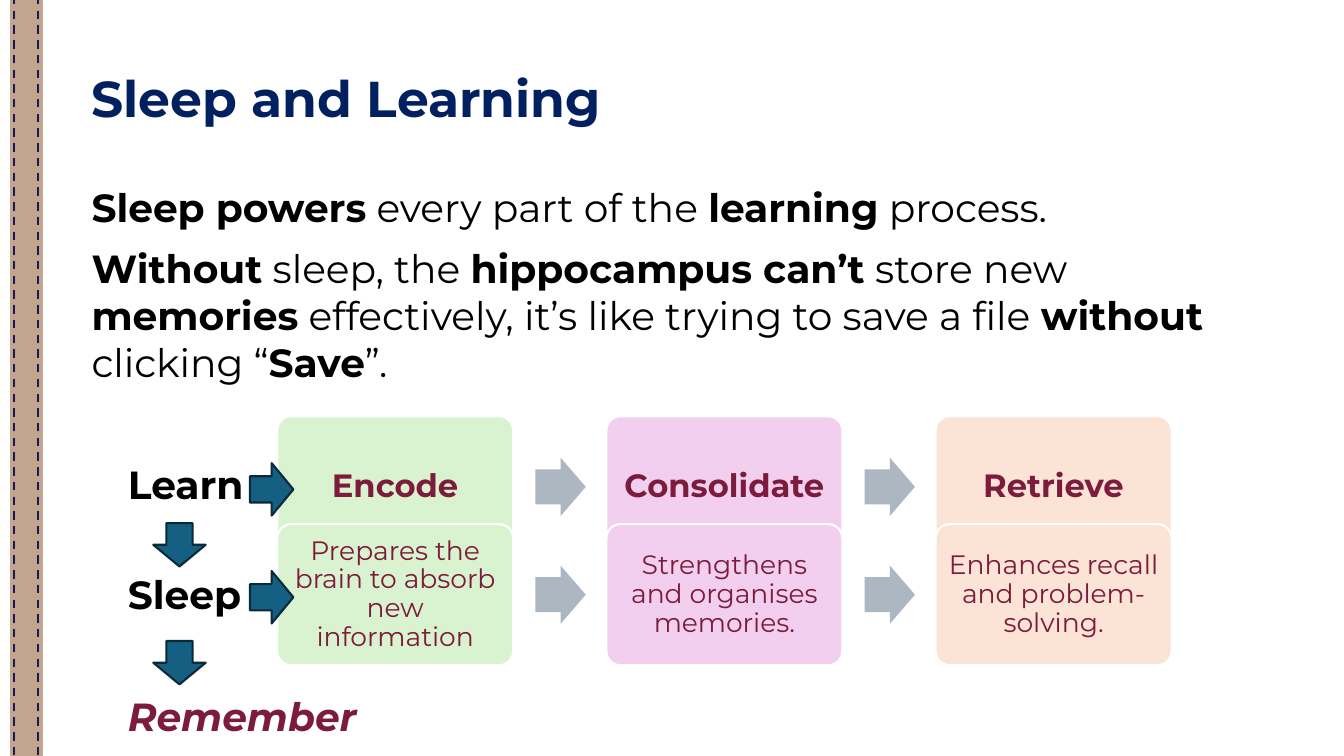
from lxml import etree
from pptx import Presentation
from pptx.dml.color import RGBColor
from pptx.enum.dml import MSO_LINE
from pptx.enum.shapes import MSO_CONNECTOR, MSO_SHAPE
from pptx.enum.text import MSO_ANCHOR, PP_ALIGN
from pptx.oxml.ns import qn
from pptx.util import Inches, Pt

RECT = MSO_SHAPE.RECTANGLE
CARD = MSO_SHAPE.ROUNDED_RECTANGLE
RIGHT_ARROW = MSO_SHAPE.RIGHT_ARROW
DOWN_ARROW = MSO_SHAPE.DOWN_ARROW
STRAIGHT = MSO_CONNECTOR.STRAIGHT
DASH = MSO_LINE.DASH
LEFT, CENTER = PP_ALIGN.LEFT, PP_ALIGN.CENTER
TOP, MIDDLE = MSO_ANCHOR.TOP, MSO_ANCHOR.MIDDLE

FONT = "Montserrat"
BLACK, NAVY, MAROON, WHITE = "000000", "002060", "7C1B3C", "FFFFFF"
TAN, STITCH, GREY, TEAL, DARK_TEAL = "C3A48C", "15195D", "ACB7C1", "156082", "092A39"

WIDTH, HEIGHT = 13.33, 7.5
GRID_LEFT, GRID_TOP = 2.75, 4.13
COL_STEP, ROW_STEP = 3.265, 1.07
CARD_W, CARD_H = 2.34, 1.4
STEP_LEFT = 1.17

BODY = [
    "**Sleep powers** every part of the **learning** process.",
    "**Without** sleep, the **hippocampus can’t** store new **memories** effectively, "
    "it’s like trying to save a file **without** clicking “**Save**”.",
]
STAGES = [
    ("Encode", "Prepares the brain to absorb new information", "D9F2D0"),
    ("Consolidate", "Strengthens and organises memories.", "F2CFEE"),
    ("Retrieve", "Enhances recall and problem-solving.", "FBE3D6"),
]


def color(value):
    return RGBColor.from_string(value)


def write(tf, paragraphs, size=28, c=BLACK, italic=False, align=LEFT, anchor=TOP,
          spacing=1.0, before=0, inset=None, wrap=True):
    tf.word_wrap = wrap
    tf.vertical_anchor = anchor
    if inset is not None:
        tf.margin_left = tf.margin_right = Inches(inset)
        tf.margin_top = tf.margin_bottom = Inches(inset)
    for i, text in enumerate(paragraphs):
        p = tf.add_paragraph() if i else tf.paragraphs[0]
        p.alignment = align
        p.line_spacing = spacing
        p.space_before = Pt(before if i else 0)
        for j, part in enumerate(text.split("**")):
            if part:
                r = p.add_run()
                r.text = part
                r.font.name = FONT
                r.font.size = Pt(size)
                r.font.bold = j % 2 == 1
                r.font.italic = italic
                r.font.color.rgb = color(c)


def add_text(s, box, paragraphs, **fmt):
    sp = s.shapes.add_textbox(*map(Inches, box))
    write(sp.text_frame, paragraphs, **fmt)


def add_block(s, kind, box, fill, line=None, line_width=1.5, adj=(), rotation=0):
    sp = s.shapes.add_shape(kind, *map(Inches, box))
    sp.shadow.inherit = False
    sp.fill.solid()
    sp.fill.fore_color.rgb = color(fill)
    if line:
        sp.line.color.rgb = color(line)
        sp.line.width = Pt(line_width)
    else:
        sp.line.fill.background()
    for i, value in enumerate(adj):
        sp.adjustments[i] = value
    sp.rotation = rotation
    return sp


def add_stitch(s, x):
    sp = s.shapes.add_connector(STRAIGHT, Inches(x), Inches(-0.04), Inches(x), Inches(HEIGHT + 0.03))
    sp.line.color.rgb = color(STITCH)
    sp.line.width = Pt(1.5)
    sp.line.dash_style = DASH
    etree.SubElement(sp._element.spPr, qn("a:effectLst"))


def add_border(s):
    add_block(s, RECT, (0.1, -0.01, 0.32, HEIGHT + 0.01), TAN, TAN, 0.75)
    for x in (0.14, 0.38):
        add_stitch(s, x)


def add_stage_row(s, row, size, inset, mark=""):
    top = GRID_TOP + row * ROW_STEP
    for col, stage in enumerate(STAGES):
        left = GRID_LEFT + col * COL_STEP
        sp = add_block(s, CARD, (left, top, CARD_W, CARD_H), stage[2], WHITE, adj=(0.1,))
        write(sp.text_frame, [mark + stage[row] + mark], size=size, c=MAROON, align=CENTER,
              anchor=MIDDLE, spacing=0.9, inset=inset)
        if col < len(STAGES) - 1:
            add_block(s, RIGHT_ARROW, (left + 2.56, top + 0.41, 0.5, 0.58), GREY, adj=(0.6, 0.5))


def add_step(s, text, top, width, **fmt):
    add_text(s, (STEP_LEFT, top, width, 0.57), [f"**{text}**"], wrap=False, **fmt)


def add_step_arrow(s, left, top, rotation=0):
    add_block(s, DOWN_ARROW, (left, top, 0.52, 0.43), TEAL, DARK_TEAL, rotation=rotation)


def main():
    prs = Presentation()
    prs.slide_width, prs.slide_height = Inches(WIDTH), Inches(HEIGHT)
    s = prs.slides.add_slide(prs.slide_layouts[6])
    add_border(s)
    add_text(s, (0.81, 0.68, 8.29, 0.81), ["**Sleep and Learning**"], size=36, c=NAVY, spacing=0.9)
    add_text(s, (0.81, 1.77, 11.64, 2.11), BODY, before=10)
    add_stage_row(s, 0, 23, 0.1, mark="**")
    add_stage_row(s, 1, 19, 0.08)
    add_step(s, "Learn", 4.52, 1.37)
    add_step(s, "Sleep", 5.61, 1.34)
    add_step(s, "Remember", 6.82, 2.5, c=MAROON, italic=True)
    for top in (5.19, 6.36):
        add_step_arrow(s, 1.52, top)
    for row in range(2):
        add_step_arrow(s, 2.435, 4.64 + row * ROW_STEP, rotation=270)
    prs.save("out.pptx")


if __name__ == "__main__":
    main()
